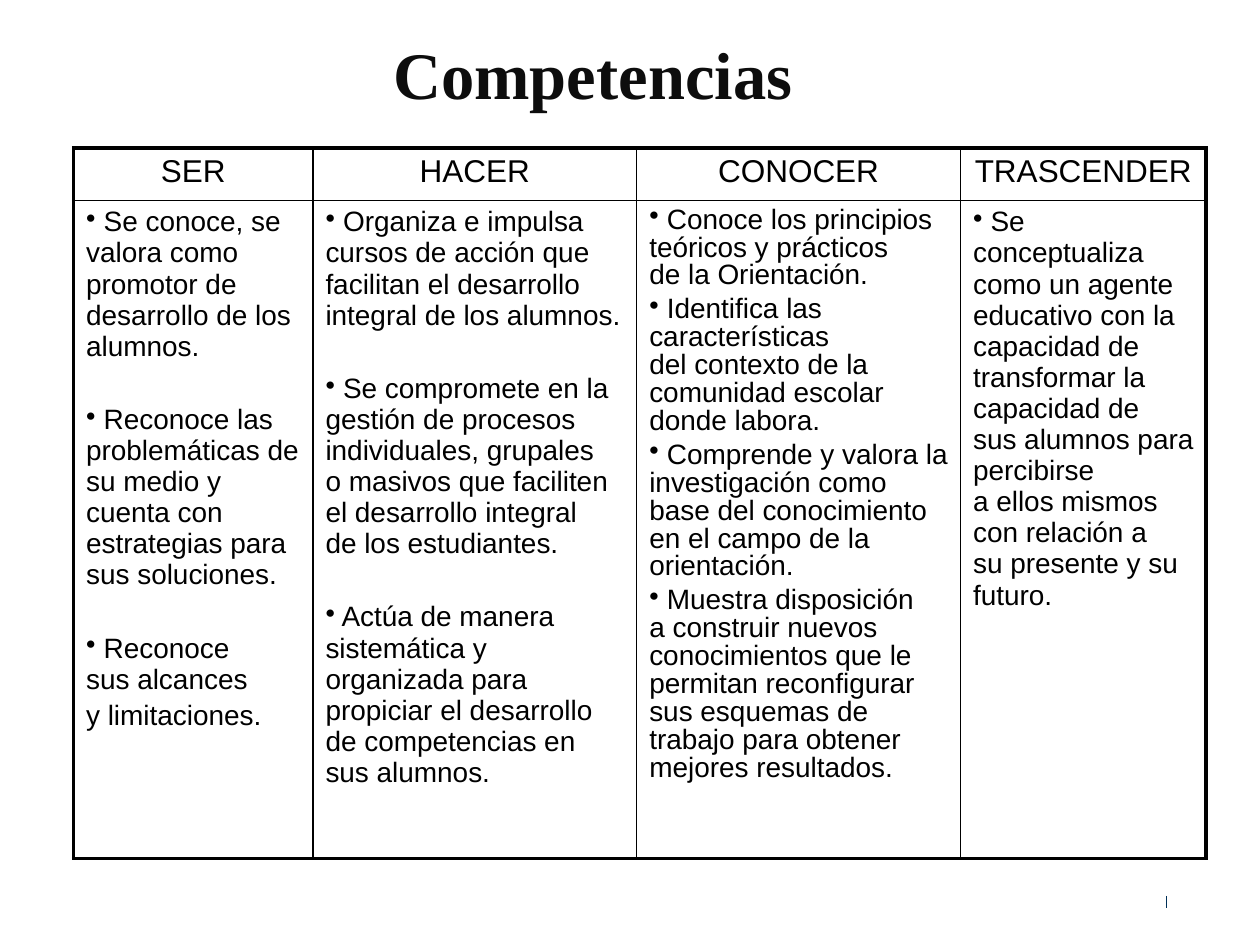
from dataclasses import dataclass

from lxml.etree import SubElement
from pptx import Presentation
from pptx.dml.color import RGBColor
from pptx.enum.shapes import MSO_CONNECTOR
from pptx.enum.text import MSO_ANCHOR, MSO_AUTO_SIZE, PP_ALIGN
from pptx.oxml.ns import qn
from pptx.util import Pt

BLACK = "000000"
INNER_WIDTH, OUTER_WIDTH = 1, 2.25
HEADER_SIZE, BODY_SIZE = 18, 16
TABLE_LEFT, TABLE_TOP = 42, 84.5
ROW_HEIGHTS = (30, 376)
NARROW_GAP, WIDE_GAP = 3.2, 24


@dataclass
class Item:
    text: str
    bulleted: bool = True
    space_before: float = WIDE_GAP


@dataclass
class Competence:
    name: str
    width: float
    items: list[Item]
    line_spacing: float = 1.0


COMPETENCES = [
    Competence("SER", 136.8, [
        Item("Se conoce, se valora como promotor de desarrollo de los alumnos."),
        Item("Reconoce las problemáticas de su medio y cuenta con estrategias "
             "para sus soluciones."),
        Item("Reconoce\nsus alcances"),
        Item("y limitaciones.", bulleted=False, space_before=NARROW_GAP),
    ]),
    Competence("HACER", 185.04, [
        Item("Organiza e impulsa cursos de acción que facilitan el desarrollo "
             "integral de los alumnos."),
        Item("Se compromete en la gestión de procesos individuales, grupales\n"
             "o masivos que faciliten el desarrollo integral\nde los estudiantes."),
        Item("Actúa de manera sistemática y organizada para propiciar el "
             "desarrollo de competencias en sus alumnos."),
    ]),
    Competence("CONOCER", 185.04, [
        Item("Conoce los principios teóricos y prácticos\nde la Orientación."),
        Item("Identifica las características\ndel contexto de la comunidad "
             "escolar donde labora.", space_before=NARROW_GAP),
        Item("Comprende y valora la investigación como base del conocimiento "
             "en el campo de la orientación.", space_before=NARROW_GAP),
        Item("Muestra disposición\na construir nuevos conocimientos que le "
             "permitan reconfigurar sus esquemas de trabajo para obtener "
             "mejores resultados.", space_before=NARROW_GAP),
    ], line_spacing=0.9),
    Competence("TRASCENDER", 140.4, [
        Item("Se conceptualiza como un agente educativo con la capacidad de "
             "transformar la capacidad de\nsus alumnos para percibirse\n"
             "a ellos mismos con relación a\nsu presente y su futuro."),
    ]),
]


def color(hex_code: str) -> RGBColor:
    return RGBColor.from_string(hex_code)


def apply_format(target, values: dict) -> None:
    for name, value in values.items():
        setattr(target, name, value)


def format_spans(para, size: float, font_name: str, hex_code: str, bold=False) -> None:
    for span in para.runs:
        apply_format(span.font, {"name": font_name, "size": Pt(size), "bold": bold})
        span.font.color.rgb = color(hex_code)
    for line_break in para._p.findall(qn("a:br")):
        SubElement(line_break, qn("a:rPr"), sz=str(int(size * 100)))


def add_bullet(para) -> None:
    """Put the bullet at the left edge, level with the wrapped lines."""
    properties = para._p.get_or_add_pPr()
    properties.set("marL", "0")
    properties.set("indent", "0")
    SubElement(properties, qn("a:buChar"), char="•")


def set_borders(cell, widths: dict[str, float]) -> None:
    properties = cell._tc.get_or_add_tcPr()
    for side, width in widths.items():
        line = SubElement(properties, qn(f"a:ln{side}"), w=str(int(Pt(width))))
        fill = SubElement(line, qn("a:solidFill"))
        SubElement(fill, qn("a:srgbClr"), val=BLACK)


def fill_header(cell, name: str) -> None:
    para = cell.text_frame.paragraphs[0]
    para.text = name
    para.alignment = PP_ALIGN.CENTER
    format_spans(para, HEADER_SIZE, "Arial", BLACK)


def fill_body(cell, competence: Competence) -> None:
    frame = cell.text_frame
    for index, item in enumerate(competence.items):
        para = frame.add_paragraph() if index else frame.paragraphs[0]
        para.text = f" {item.text}" if item.bulleted else item.text
        para.line_spacing = competence.line_spacing
        if index:
            para.space_before = Pt(item.space_before)
        if item.bulleted:
            add_bullet(para)
        format_spans(para, BODY_SIZE, "Arial", BLACK)


def add_competence_table(page) -> None:
    total_width = sum(competence.width for competence in COMPETENCES)
    table = page.shapes.add_table(
        len(ROW_HEIGHTS), len(COMPETENCES), Pt(TABLE_LEFT), Pt(TABLE_TOP),
        Pt(total_width), Pt(sum(ROW_HEIGHTS))).table
    apply_format(table, {"first_row": False, "horz_banding": False})
    for row, height in zip(table.rows, ROW_HEIGHTS):
        row.height = Pt(height)
    last = len(COMPETENCES) - 1
    for index, competence in enumerate(COMPETENCES):
        table.columns[index].width = Pt(competence.width)
        header, body = table.cell(0, index), table.cell(1, index)
        fill_header(header, competence.name)
        fill_body(body, competence)
        sides = {"L": INNER_WIDTH if index else OUTER_WIDTH,
                 "R": OUTER_WIDTH if index == last else INNER_WIDTH}
        set_borders(header, sides | {"T": OUTER_WIDTH, "B": INNER_WIDTH})
        set_borders(body, sides | {"T": INNER_WIDTH, "B": OUTER_WIDTH})
        for cell in (header, body):
            cell.fill.background()


def add_title(page) -> None:
    title = page.shapes.title
    apply_format(title, {"left": Pt(217.5), "top": Pt(15), "width": Pt(245), "height": Pt(53)})
    frame = title.text_frame
    para = frame.paragraphs[0]
    para.text = "Competencias"
    para.alignment = PP_ALIGN.LEFT
    apply_format(frame, {"word_wrap": False, "auto_size": MSO_AUTO_SIZE.NONE,
                         "vertical_anchor": MSO_ANCHOR.TOP})
    format_spans(para, 38, "Times New Roman", "0D0D0D", bold=True)


def add_footer_mark(page) -> None:
    mark = page.shapes.add_connector(
        MSO_CONNECTOR.STRAIGHT, Pt(666.5), Pt(512), Pt(666.5), Pt(519))
    mark.line.color.rgb = color("003057")
    mark.line.width = Pt(0.5)
    SubElement(mark._element.spPr, qn("a:effectLst"))


def main() -> None:
    deck = Presentation()
    deck.slide_width, deck.slide_height = Pt(720), Pt(540)
    page = deck.slides.add_slide(deck.slide_layouts.get_by_name("Title Only"))
    add_footer_mark(page)
    add_competence_table(page)
    add_title(page)
    deck.save("out.pptx")


if __name__ == "__main__":
    main()
